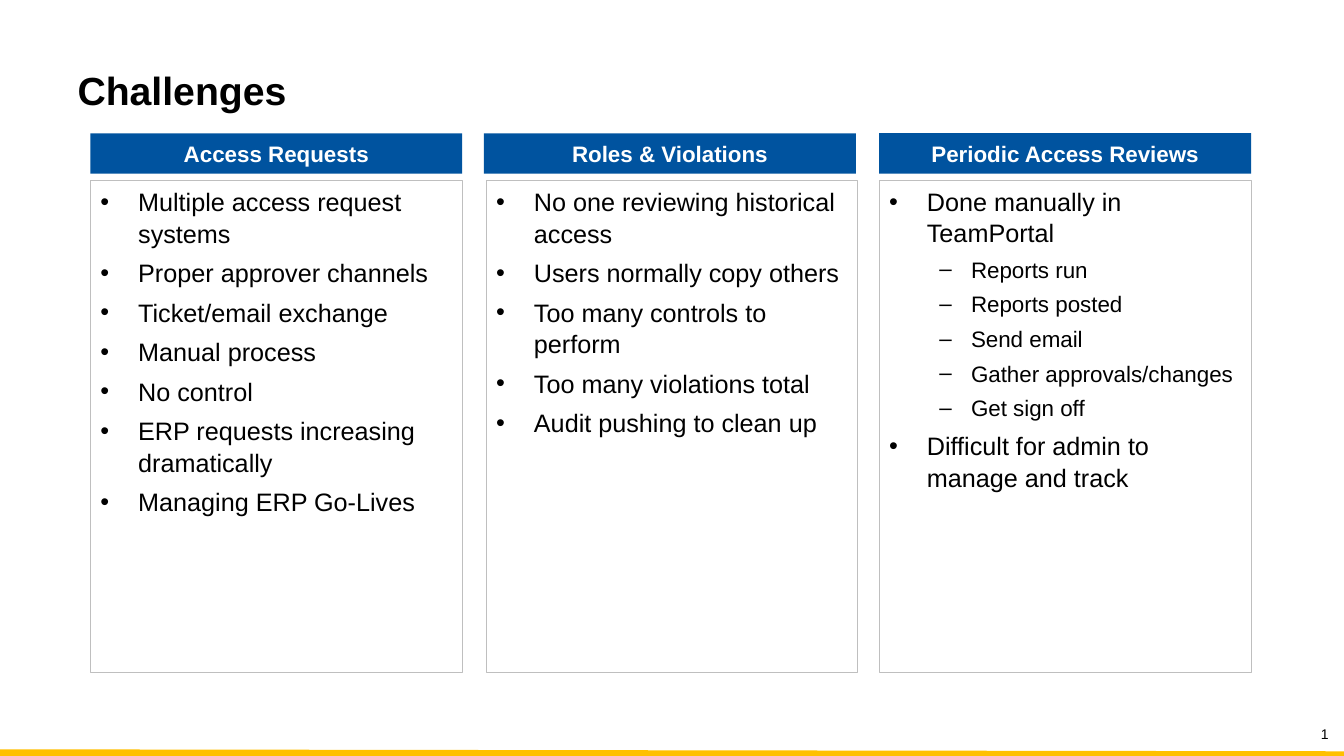
from lxml import etree
from pptx import Presentation
from pptx.dml.color import RGBColor
from pptx.enum.shapes import MSO_CONNECTOR
from pptx.enum.text import MSO_ANCHOR, MSO_AUTO_SIZE, PP_ALIGN
from pptx.oxml.ns import qn
from pptx.util import Pt

STRAIGHT = MSO_CONNECTOR.STRAIGHT
TOP, MIDDLE, BOTTOM = MSO_ANCHOR.TOP, MSO_ANCHOR.MIDDLE, MSO_ANCHOR.BOTTOM
LEFT, CENTER, RIGHT = PP_ALIGN.LEFT, PP_ALIGN.CENTER, PP_ALIGN.RIGHT
NO_FIT = MSO_AUTO_SIZE.NONE

FONT = "Arial"
COLORS = {"text": "000000", "header": "00539F", "header_text": "FFFFFF",
          "border": "BFBFBF", "footer": "FFC000"}
WIDTH, HEIGHT = 960, 540
COLUMN_WIDTH = 265.7
LEVELS = [
    {"bullet": "•", "indent": 27, "hanging": 27, "before": 5.8, "size": 18},
    {"bullet": "–", "indent": 58.5, "hanging": 22.5, "before": 4.8, "size": 16},
]
COLUMNS = [
    ("Access Requests", 64.5, 64.5, [
        (0, "Multiple access request systems"),
        (0, "Proper approver channels"),
        (0, "Ticket/email exchange"),
        (0, "Manual process"),
        (0, "No control"),
        (0, "ERP requests increasing dramatically"),
        (0, "Managing ERP Go-Lives"),
    ]),
    ("Roles & Violations", 345.7, 347.2, [
        (0, "No one reviewing historical access"),
        (0, "Users normally copy others"),
        (0, "Too many controls to perform"),
        (0, "Too many violations total"),
        (0, "Audit pushing to clean up"),
    ]),
    ("Periodic Access Reviews", 628, 628, [
        (0, "Done manually in TeamPortal"),
        (1, "Reports run"),
        (1, "Reports posted"),
        (1, "Send email"),
        (1, "Gather approvals/changes"),
        (1, "Get sign off"),
        (0, "Difficult for admin to manage and track"),
    ]),
]


def color(key):
    return RGBColor.from_string(COLORS[key])


def style_font(font, size, key, bold=False):
    font.name = FONT
    font.size = Pt(size)
    font.bold = bold
    font.color.rgb = color(key)


def place(box, left, top, width, height, anchor):
    box.left, box.top = Pt(left), Pt(top)
    box.width, box.height = Pt(width), Pt(height)
    frame = box.text_frame
    frame.auto_size = NO_FIT
    frame.word_wrap = True
    frame.vertical_anchor = anchor
    return frame


def write_line(frame, text, size, key, align):
    line = frame.paragraphs[0]
    line.text = text
    line.alignment = align
    line.space_before = Pt(0)
    style_font(line.font, size, key, True)


def add_header(box, text, left):
    frame = place(box, left, 95.2, COLUMN_WIDTH, 28.8, MIDDLE)
    box.fill.solid()
    box.fill.fore_color.rgb = color("header")
    write_line(frame, text, 16, "header_text", CENTER)


def add_list(box, items, left):
    frame = place(box, left, 128.7, COLUMN_WIDTH, 351.4, TOP)
    box.line.color.rgb = color("border")
    box.line.width = Pt(0.75)
    for number, (level, text) in enumerate(items):
        item = frame.add_paragraph() if number else frame.paragraphs[0]
        style = LEVELS[level]
        item.text = text
        item.level = level
        item.alignment = LEFT
        item.line_spacing = 1.04
        item.space_before = Pt(style["before"] if number else 0)
        properties = item._p.get_or_add_pPr()
        properties.set("marL", str(Pt(style["indent"])))
        properties.set("indent", str(-Pt(style["hanging"])))
        etree.SubElement(properties, qn("a:buFont")).set("typeface", FONT)
        etree.SubElement(properties, qn("a:buChar")).set("char", style["bullet"])
        style_font(item.font, style["size"], "text")


def add_footer_line(slide):
    footer = slide.shapes.add_connector(STRAIGHT, 0, Pt(538.6), Pt(WIDTH), Pt(HEIGHT))
    footer.line.color.rgb = color("footer")
    footer.line.width = Pt(6.75)
    etree.SubElement(footer._element.spPr, qn("a:effectLst"))


def add_page_number(slide):
    box = slide.shapes.add_textbox(0, 0, 0, 0)
    frame = place(box, 882, 509.8, 74.2, 28.8, MIDDLE)
    line = frame.paragraphs[0]
    line.alignment = RIGHT
    run = line.add_run()
    run.text = "4"
    style_font(run.font, 10, "text")
    field = run._r
    field.tag = qn("a:fld")
    field.set("id", "{B6F15528-21DE-4FAA-801E-634DDDAF4B2B}")
    field.set("type", "slidenum")


def main():
    deck = Presentation()
    deck.slide_width, deck.slide_height = Pt(WIDTH), Pt(HEIGHT)
    slide = deck.slides.add_slide(deck.slide_layouts.get_by_name("Comparison"))
    add_page_number(slide)
    add_footer_line(slide)

    title = place(slide.shapes.title, 48.2, 9.4, 864, 74.9, BOTTOM)
    write_line(title, "Challenges", 28, "text", LEFT)

    bodies = list(slide.placeholders)[1:]
    bodies += [slide.shapes.add_textbox(0, 0, 0, 0) for _ in range(2)]
    for column, header, body in zip(COLUMNS, bodies[::2], bodies[1::2]):
        heading, header_left, list_left, items = column
        add_header(header, heading, header_left)
        add_list(body, items, list_left)

    deck.save("out.pptx")


if __name__ == "__main__":
    main()
